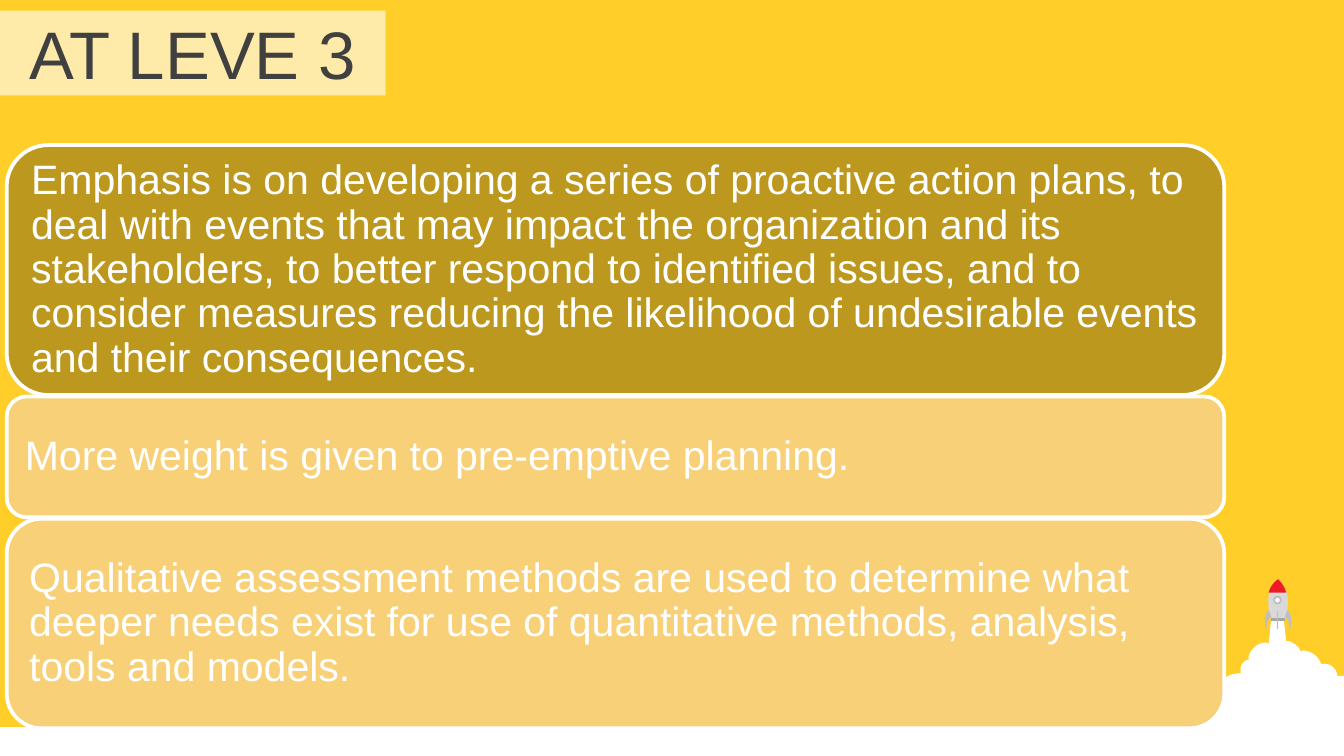
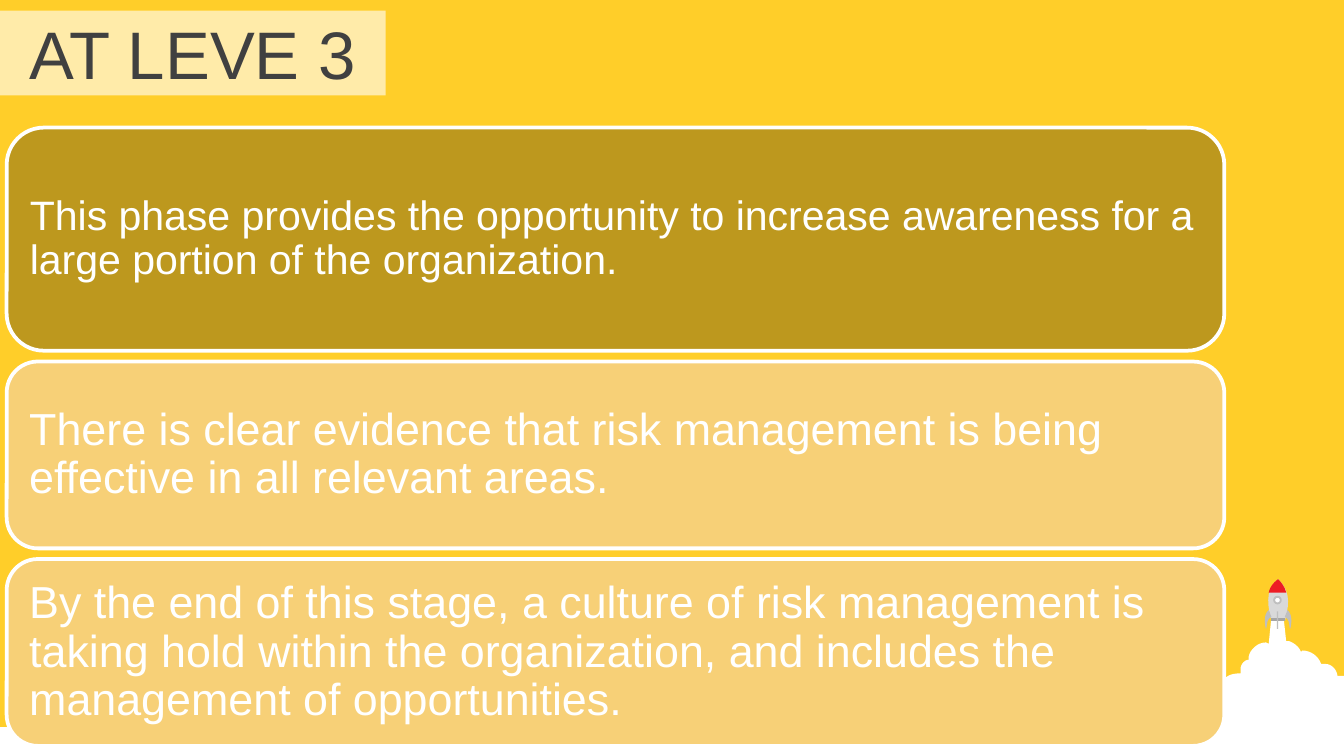
from pptx import Presentation
from pptx.dml.color import RGBColor
from pptx.enum.shapes import MSO_SHAPE as Shape
from pptx.enum.text import MSO_ANCHOR as Anchor, PP_ALIGN as Align
from pptx.util import Pt

PX = 9144  # EMU per px, 100 px to the inch
WIDTH = 1000
FONT = "Arial"
COLORS = {
    "background": "FFCE29",
    "title_band": "FFEBA9",
    "title": "404040",
    "lead_card": "BD981E",
    "card": "F7D077",
    "white": "FFFFFF",
    "body": "D9D9D9",
    "nozzle": "A6A6A6",
    "nose": "ED1C24",
    "trim": "BFBFBF",
}

TITLE = "AT LEVE 3"
TITLE_SIZE = 36
TITLE_BAND = (0, 8, 287, 63)
GROUND = (0, 541, WIDTH, 24)
CARD_LEFT, CARD_WIDTH = 5, 906

# Each card: height, text size, text
SLIDES = [
    {"top": 108, "gap": 1, "cards": [
        (186, 22, "Emphasis is on developing a series of proactive action plans, "
                  "to deal with events that may impact the organization and its "
                  "stakeholders, to better respond to identified issues, and to "
                  "consider measures reducing the likelihood of undesirable events "
                  "and their consequences."),
        (90, 22, "More weight is given to pre-emptive planning."),
        (156, 22, "Qualitative assessment methods are used to determine what deeper "
                  "needs exist for use of quantitative methods, analysis, tools and "
                  "models."),
    ]},
    {"top": 95, "gap": 8, "cards": [
        (166, 22, "This phase provides the opportunity to increase awareness for a "
                  "large portion of the organization."),
        (139, 24, "There is clear evidence that risk management is being effective "
                  "in all relevant areas."),
        (139, 24, "By the end of this stage, a culture of risk management is taking "
                  "hold within the organization, and includes the management of "
                  "opportunities."),
    ]},
]

# Outlines: two numbers are a corner, six are a Bézier curve
SMOKE = [
    (946, 459), (955, 459), (957, 477), (959, 477),
    (962, 478, 965, 480, 967, 483), (968, 485), (969, 484),
    (975, 484, 981, 488, 983, 494), (986, 494),
    (990, 494, 994, 497, 995, 502), (995, 503), (1000, 503), (1000, 560), (998, 560),
    (994, 560, 990, 559, 987, 557), (986, 556), (985, 557),
    (983, 558, 981, 559, 978, 559), (975, 559, 973, 557, 971, 555), (969, 554),
    (969, 555), (967, 558, 964, 559, 960, 559), (957, 559, 954, 558, 952, 556),
    (951, 555), (949, 556), (945, 559, 940, 561, 934, 561),
    (923, 561, 917, 556, 913, 551), (911, 553, 907, 554, 904, 553),
    (900, 552, 894, 550, 893, 545), (893, 543), (892, 544),
    (891, 545, 889, 545, 886, 545), (880, 545, 875, 540, 875, 534),
    (875, 528, 880, 523, 886, 523), (888, 523), (889, 524), (889, 522),
    (889, 513, 896, 506, 906, 506), (909, 506), (910, 506), (911, 505),
    (914, 502, 918, 501, 923, 501), (923, 498), (923, 495, 925, 492, 928, 491),
    (929, 491), (929, 489), (930, 483, 936, 478, 942, 478), (944, 479),
]
BODY = [(946, 462), (944, 453, 940, 440, 951, 431), (962, 441, 958, 454, 956, 462)]
NOZZLE = [(946, 460), (956, 460), (956, 462), (946, 462)]
NOSE = [(951, 431), (954, 434, 956, 437, 957, 441), (944, 441),
        (945, 437, 947, 434, 951, 431)]
LEFT_FIN = [(944, 454), (946, 459), (942, 461, 943, 466, 942, 468),
            (941, 465, 940, 457, 944, 454)]
FIN_MIRROR = 1902  # sum of the x values of mirrored points
RIGHT_FIN = [tuple(FIN_MIRROR - n if i % 2 == 0 else n for i, n in enumerate(step))
             for step in LEFT_FIN]
WINDOW = (948, 444, 5, 5)
EXHAUST = (950, 455, 1, 13)


def rgb(name):
    return RGBColor.from_string(COLORS[name])


def paint(shape, fill, line=None, line_width=0):
    shape.shadow.inherit = False
    shape.fill.solid()
    shape.fill.fore_color.rgb = rgb(fill)
    if line:
        shape.line.color.rgb = rgb(line)
        shape.line.width = Pt(line_width)
    else:
        shape.line.fill.background()


def add_block(slide, kind, box, fill, line=None, line_width=0):
    block = slide.shapes.add_shape(kind, *(n * PX for n in box))
    paint(block, fill, line, line_width)
    return block


def flatten(outline, steps=8):
    """Turn corners and curves into a list of points in EMU."""
    points = []
    for step in outline:
        if len(step) == 2:
            points.append(step)
            continue
        (x0, y0), (x1, y1, x2, y2, x3, y3) = points[-1], step
        for i in range(1, steps + 1):
            t = i / steps
            u = 1 - t
            a, b, c, d = u ** 3, 3 * u * u * t, 3 * u * t * t, t ** 3
            points.append((a * x0 + b * x1 + c * x2 + d * x3,
                           a * y0 + b * y1 + c * y2 + d * y3))
    return [(round(x * PX), round(y * PX)) for x, y in points]


def add_outline(slide, outline, fill):
    start, *rest = flatten(outline)
    builder = slide.shapes.build_freeform(*start)
    builder.add_line_segments(rest, close=True)
    paint(builder.convert_to_shape(), fill)


def write(shape, text, size, color, align):
    frame = shape.text_frame
    frame.word_wrap = True
    frame.vertical_anchor = Anchor.MIDDLE
    frame.text = text
    paragraph = frame.paragraphs[0]
    paragraph.alignment = align
    font = paragraph.runs[0].font
    font.name, font.size, font.color.rgb = FONT, Pt(size), rgb(color)
    return paragraph


def add_rocket(slide):
    add_outline(slide, SMOKE, "white")
    add_outline(slide, BODY, "body")
    add_outline(slide, NOZZLE, "nozzle")
    add_outline(slide, NOSE, "nose")
    add_block(slide, Shape.OVAL, WINDOW, "white", "trim", 1)
    add_block(slide, Shape.RECTANGLE, EXHAUST, "trim")
    for fin in (LEFT_FIN, RIGHT_FIN):
        add_outline(slide, fin, "trim")


def add_title(slide):
    band = add_block(slide, Shape.RECTANGLE, TITLE_BAND, "title_band")
    paragraph = write(band, TITLE, TITLE_SIZE, "title", Align.CENTER)
    paragraph.space_before = Pt(TITLE_SIZE * 0.2)


def add_cards(slide, top, gap, cards):
    for i, (height, size, text) in enumerate(cards):
        card = add_block(slide, Shape.ROUNDED_RECTANGLE,
                         (CARD_LEFT, top, CARD_WIDTH, height),
                         "card" if i else "lead_card", "white", 2)
        paragraph = write(card, text, size, "white", Align.LEFT)
        paragraph.line_spacing = 0.9
        paragraph.space_after = Pt(size * 0.35)
        frame = card.text_frame
        frame.margin_left = frame.margin_right = Pt(size * 0.3)
        frame.margin_top = frame.margin_bottom = Pt(size * 0.3)
        top += height + gap


def main():
    prs = Presentation()
    prs.slide_width = WIDTH * PX
    prs.slide_height = prs.slide_width * 9 // 16
    background = prs.slide_master.background.fill
    background.solid()
    background.fore_color.rgb = rgb("background")
    for content in SLIDES:
        slide = prs.slides.add_slide(prs.slide_layouts[6])
        add_block(slide, Shape.RECTANGLE, GROUND, "white")
        add_rocket(slide)
        add_title(slide)
        add_cards(slide, **content)
    prs.save("out.pptx")


if __name__ == "__main__":
    main()
